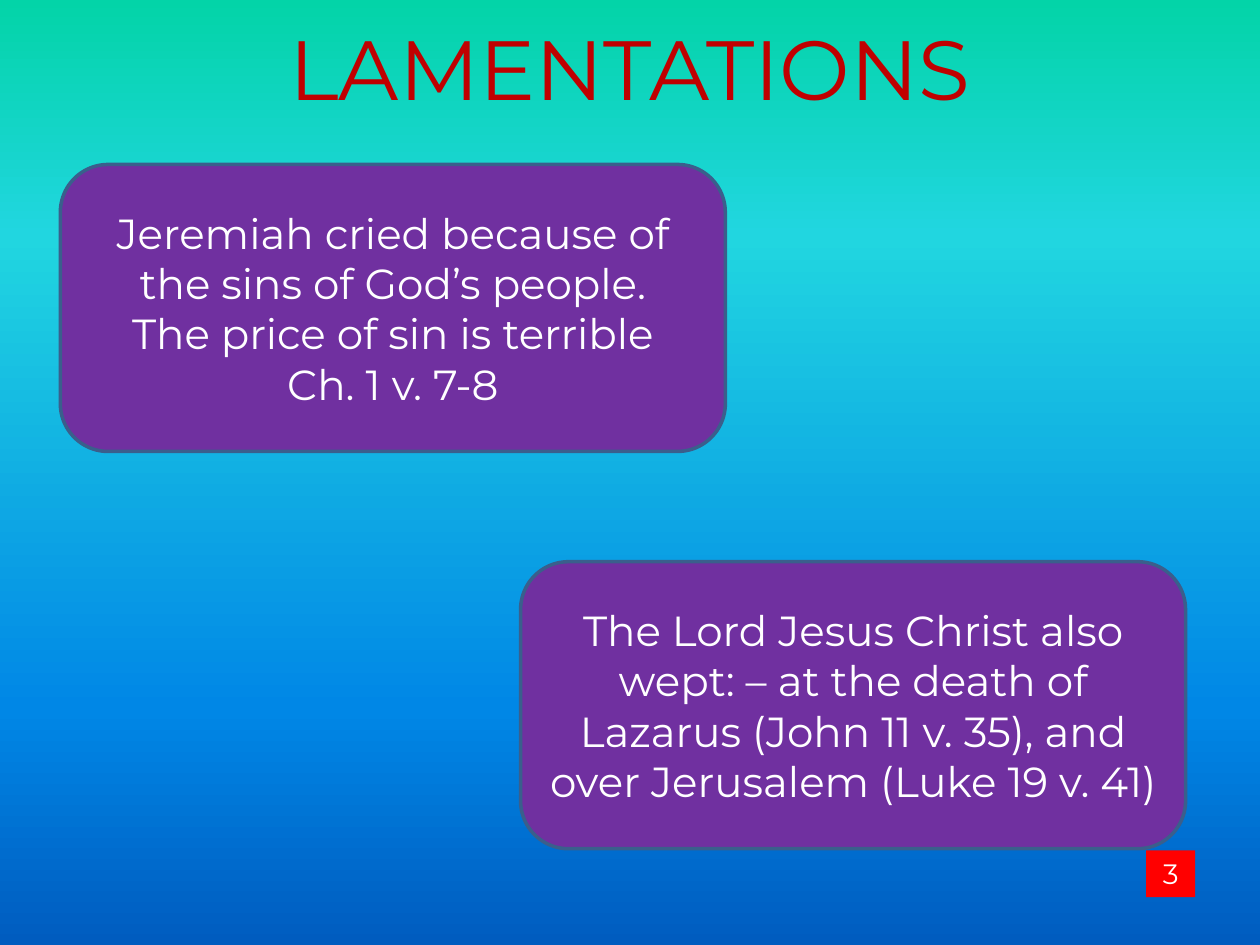
from copy import deepcopy

from pptx import Presentation
from pptx.dml.color import RGBColor
from pptx.enum.shapes import MSO_SHAPE
from pptx.enum.text import MSO_ANCHOR, PP_ALIGN
from pptx.oxml.ns import qn
from pptx.util import Pt


def color(hex_text):
    return RGBColor.from_string(hex_text)


def write_text(frame, text, size=24, ink="FFFFFF", font="Montserrat",
               anchor=MSO_ANCHOR.MIDDLE):
    """Fill a text frame with centred paragraphs, one for each line of text."""
    frame.word_wrap = True
    frame.vertical_anchor = anchor
    frame.text = text
    for para in frame.paragraphs:
        para.alignment = PP_ALIGN.CENTER
        para.line_spacing = 1.0
        para.space_before = Pt(0)
        for span in para.runs:
            span.font.name = font
            span.font.size = Pt(size)
            span.font.color.rgb = color(ink)


class SlideBuilder:
    panel_fill = "7030A0"
    panel_line = "3A5F8C"
    panel_size = (380, 164)

    def __init__(self, page):
        self.page = page

    def background(self, stops):
        fill = self.page.background.fill
        fill.gradient()
        fill.gradient_angle = 270
        stop_list = self.page.element.find(".//" + qn("a:gsLst"))
        while len(stop_list) < len(stops):
            stop_list.append(deepcopy(stop_list[0]))
        for stop, (position, hex_text) in zip(fill.gradient_stops, stops):
            stop.position = position
            stop.color.rgb = color(hex_text)

    def title(self, text, left, top, width, height):
        box = self.page.shapes.title
        box.left, box.top = Pt(left), Pt(top)
        box.width, box.height = Pt(width), Pt(height)
        write_text(box.text_frame, text, size=48, ink="C00000",
                   anchor=MSO_ANCHOR.TOP)

    def shape(self, kind, left, top, width, height, fill):
        box = self.page.shapes.add_shape(
            kind, Pt(left), Pt(top), Pt(width), Pt(height))
        box.shadow.inherit = False
        box.fill.solid()
        box.fill.fore_color.rgb = color(fill)
        return box

    def panel(self, text, left, top):
        box = self.shape(MSO_SHAPE.ROUNDED_RECTANGLE, left, top,
                         *self.panel_size, self.panel_fill)
        box.line.color.rgb = color(self.panel_line)
        box.line.width = Pt(2)
        write_text(box.text_frame, text)

    def page_number(self, text, left, top, width, height):
        box = self.shape(MSO_SHAPE.RECTANGLE, left, top, width, height, "FF0000")
        box.line.fill.background()
        write_text(box.text_frame, text, size=16, anchor=MSO_ANCHOR.TOP)


def main():
    deck = Presentation()
    deck.slide_width, deck.slide_height = Pt(720), Pt(540)
    title_only = deck.slide_layouts[5]
    builder = SlideBuilder(deck.slides.add_slide(title_only))

    # Background and title
    builder.background([(0, "03D4A8"), (0.25, "21D6E0"),
                        (0.75, "0087E6"), (1, "005CBF")])
    builder.title("LAMENTATIONS", 0, 6, 720, 65.5)

    # Message panels
    builder.panel("Jeremiah cried because of the sins of God’s people.\n"
                  "The price of sin is terrible\n"
                  "Ch. 1 v. 7-8", 34.5, 94)
    builder.panel("The Lord Jesus Christ also wept: – at the death of Lazarus "
                  "(John 11 v. 35), and over Jerusalem (Luke 19 v. 41)",
                  297.5, 321)

    # Page number
    builder.page_number("3", 655, 486, 28, 26.7)

    deck.save("out.pptx")


if __name__ == "__main__":
    main()
